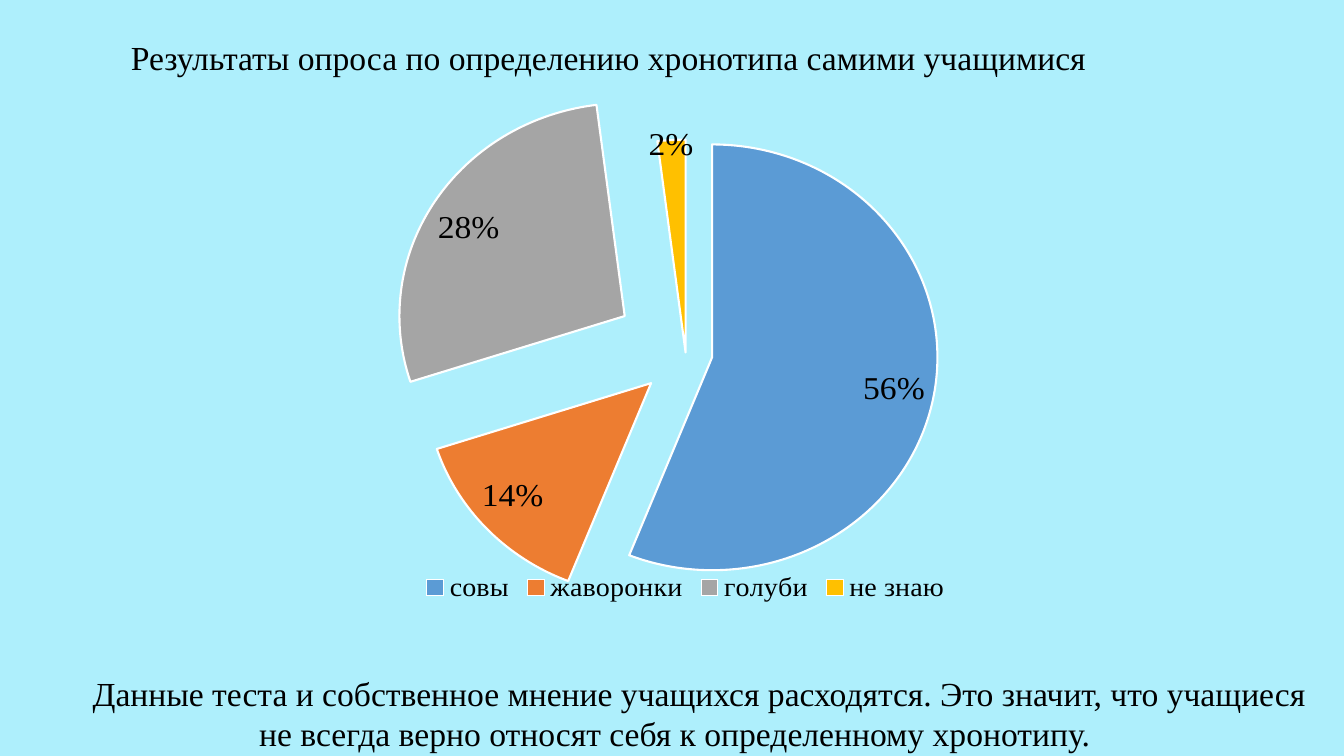
from pptx import Presentation
from pptx.chart.data import CategoryChartData
from pptx.dml.color import RGBColor
from pptx.enum.chart import XL_CHART_TYPE as ChartType
from pptx.enum.chart import XL_LABEL_POSITION as LabelPosition
from pptx.enum.chart import XL_LEGEND_POSITION as LegendPosition
from pptx.enum.text import PP_ALIGN as Align
from pptx.util import Pt
from lxml import etree

PX = 9525  # 96 px to the inch
FONT = "Times New Roman"
COLORS = {
    "background": "AEEFFC",
    "text": "000000",
    "border": "FFFFFF",
}
# chronotype, share, slice colour, explosion in percent
CHRONOTYPES = [
    ("совы", 0.56, "5B9BD5", 12),
    ("жаворонки", 0.14, "ED7D31", 21),
    ("голуби", 0.28, "A5A5A5", 32),
    ("не знаю", 0.02, "FFC000", 0),
]
TITLE = "Результаты опроса по определению хронотипа самими учащимися"
CONCLUSION = (
    "Данные теста и собственное мнение учащихся расходятся. Это значит, что "
    "учащиеся не всегда верно относят себя к определенному хронотипу."
)


def color(name):
    return RGBColor.from_string(COLORS.get(name, name))


def emu(box):
    return [length * PX for length in box]


def set_font(font, size):
    font.name = FONT
    font.size = Pt(size)
    font.color.rgb = color("text")


def add_text(slide, box, text, size=24, align=Align.CENTER, indent=0):
    frame = slide.shapes.add_textbox(*emu(box)).text_frame
    frame.word_wrap = True
    paragraph = frame.paragraphs[0]
    paragraph.alignment = align
    if indent:
        properties = paragraph._p.get_or_add_pPr()
        properties.set("marL", "0")
        properties.set("indent", str(indent * PX))
    run = paragraph.add_run()
    run.text = text
    set_font(run.font, size)


def chart_element(parent, tag, **attributes):
    namespace = parent.nsmap["c"]
    element = etree.Element(f"{{{namespace}}}{tag}")
    for name, value in attributes.items():
        element.set(name, str(value))
    return element


def set_plot_layout(chart, x, y, w, h):
    plot_area = chart._chartSpace.chart.plotArea
    for old in plot_area.findall("c:layout", plot_area.nsmap):
        plot_area.remove(old)
    layout = chart_element(plot_area, "layout")
    manual = chart_element(plot_area, "manualLayout")
    settings = [("layoutTarget", "inner"), ("xMode", "edge"), ("yMode", "edge"),
                ("x", x), ("y", y), ("w", w), ("h", h)]
    for tag, value in settings:
        manual.append(chart_element(plot_area, tag, val=value))
    layout.append(manual)
    plot_area.insert(0, layout)


def add_survey_pie(slide, box):
    names, shares, fills, explosions = zip(*CHRONOTYPES)
    data = CategoryChartData(number_format="0%")
    data.categories = names
    data.add_series("Series 1", shares)
    chart = slide.shapes.add_chart(ChartType.PIE, *emu(box), data).chart
    chart.has_title = False
    set_font(chart.font, 20)
    set_plot_layout(chart, 0, 0.027, 1, 0.885)

    # Slices
    plot = chart.plots[0]
    plot.vary_by_categories = True
    for index, (fill, explosion) in enumerate(zip(fills, explosions)):
        point = plot.series[0].points[index]
        point.format.fill.solid()
        point.format.fill.fore_color.rgb = color(fill)
        point.format.line.color.rgb = color("border")
        point.format.line.width = Pt(1.5)
        properties = point.format._element.find("c:spPr", plot._element.nsmap)
        properties = properties if properties is not None else point._element
        data_point = plot.series[0]._element.dPt_lst[index]
        shape_properties = data_point.find("c:spPr", data_point.nsmap)
        shape_properties.addprevious(
            chart_element(data_point, "explosion", val=explosion))

    # Labels
    plot.has_data_labels = True
    labels = plot.data_labels
    labels.show_value = True
    labels.number_format = "0%"
    labels.number_format_is_linked = False
    labels.position = LabelPosition.BEST_FIT
    set_font(labels.font, 24)

    # Legend
    chart.has_legend = True
    chart.legend.position = LegendPosition.BOTTOM
    chart.legend.include_in_layout = False
    set_font(chart.legend.font, 20)


def build_survey_slide(presentation):
    slide = presentation.slides.add_slide(presentation.slide_layouts[6])
    slide.background.fill.solid()
    slide.background.fill.fore_color.rgb = color("background")
    add_text(slide, (58, 30, 1043, 48), TITLE)
    add_survey_pie(slide, (272, 94, 762, 485))
    add_text(slide, (21, 636, 1243, 87), CONCLUSION, indent=47)


def main():
    presentation = Presentation()
    presentation.slide_width = 1280 * PX
    presentation.slide_height = 720 * PX
    build_survey_slide(presentation)
    presentation.save("out.pptx")


if __name__ == "__main__":
    main()
